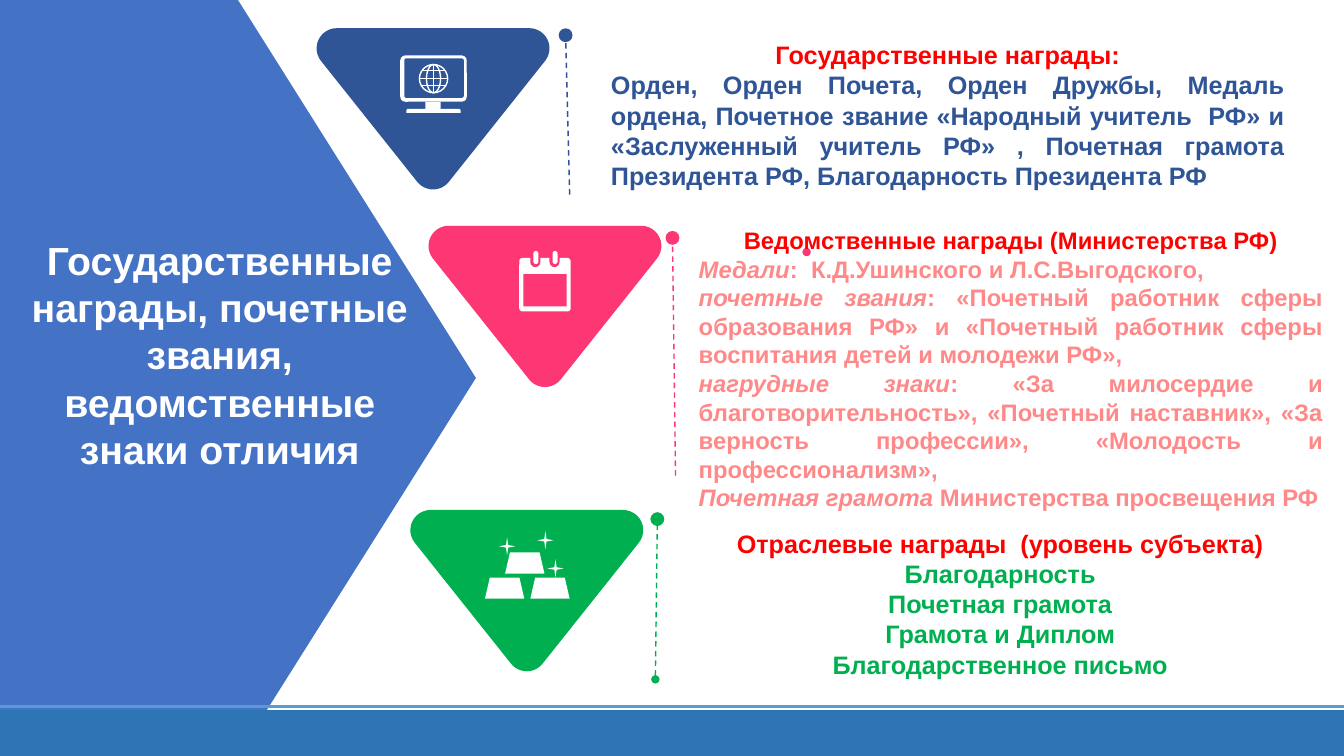
from math import cos, radians, sin

from lxml import etree
from pptx import Presentation
from pptx.dml.color import RGBColor
from pptx.enum.dml import MSO_LINE
from pptx.enum.shapes import MSO_CONNECTOR, MSO_SHAPE
from pptx.enum.text import MSO_ANCHOR, PP_ALIGN
from pptx.oxml.ns import qn
from pptx.util import Inches, Pt

COLORS = {
    "arrow": "4472C4", "white": "FFFFFF", "red": "FF0000",
    "navy": "2F5597", "pink": "FC3774", "salmon": "FF8989",
    "green": "00B050", "band": "2E75B6", "band_edge": "5B9BD5",
}


def add_shape(shapes, kind, box, fill=None, line=None, adjustment=None):
    """Add a preset shape; box is left, top, width, height in inches."""
    shape = shapes.add_shape(kind, *map(Inches, box))
    shape.shadow.inherit = False
    if fill:
        shape.fill.solid()
        shape.fill.fore_color.rgb = RGBColor.from_string(COLORS[fill])
    else:
        shape.fill.background()
    if line:
        shape.line.color.rgb = RGBColor.from_string(COLORS[line])
        shape.line.width = Pt(1)
    else:
        shape.line.fill.background()
    if adjustment is not None:
        shape.adjustments[0] = adjustment
    return shape


def add_line(shapes, start, end, color, width=1, dots=None):
    """Add a line; dots maps headEnd or tailEnd to a dot size and makes it dashed."""
    line = shapes.add_connector(MSO_CONNECTOR.STRAIGHT, *map(Inches, start + end))
    line.line.color.rgb = RGBColor.from_string(COLORS[color])
    line.line.width = Pt(width)
    properties = line._element.spPr
    if dots:
        line.line.dash_style = MSO_LINE.DASH
        for line_end, size in dots.items():
            etree.SubElement(properties.find(qn("a:ln")), qn(f"a:{line_end}"),
                             type="oval", w=size, len=size)
    etree.SubElement(properties, qn("a:effectLst"))


presentation = Presentation()
presentation.slide_width = Inches(13.33)
presentation.slide_height = Inches(7.5)
slide = presentation.slides.add_slide(presentation.slide_layouts[6])

add_shape(slide.shapes, MSO_SHAPE.PENTAGON, (0, 0, 4.72, 7.5), "arrow")

# Rounded triangle: corner centres with the start and end angle of each arc
CORNER_RADIUS = 0.2
CORNERS = [(2.11, 0.2, -90, 39), (1.155, 1.4, 39, 141), (0.2, 0.2, 141, 270)]
ARC_STEPS = 12
triangle = [
    (x + CORNER_RADIUS * cos(radians(first + (last - first) * step / ARC_STEPS)),
     y + CORNER_RADIUS * sin(radians(first + (last - first) * step / ARC_STEPS)))
    for x, y, first, last in CORNERS
    for step in range(ARC_STEPS + 1)
]
badges = []
for left, top, color in [(3.14, 0.28, "navy"), (4.25, 2.24, "pink"), (4.07, 5.06, "green")]:
    badge = slide.shapes.add_group_shape().shapes
    points = [(Inches(left + x), Inches(top + y)) for x, y in triangle]
    builder = badge.build_freeform(*points[0])
    builder.add_line_segments(points[1:])
    shape = builder.convert_to_shape()
    shape.shadow.inherit = False
    shape.fill.solid()
    shape.fill.fore_color.rgb = RGBColor.from_string(COLORS[color])
    shape.line.fill.background()
    badges.append(badge)
computer, calendar, bars = badges

# Computer with a globe
add_shape(computer, MSO_SHAPE.ROUNDED_RECTANGLE, (3.97, 0.55, 0.66, 0.46), "white", adjustment=0.11)
add_shape(computer, MSO_SHAPE.ROUNDED_RECTANGLE, (4.01, 0.58, 0.59, 0.39), "navy", adjustment=0.05)
add_shape(computer, MSO_SHAPE.RECTANGLE, (4.22, 1.01, 0.15, 0.08), "white")
add_shape(computer, MSO_SHAPE.ROUND_2_SAME_RECTANGLE, (4.03, 1.08, 0.54, 0.04), "white", adjustment=0.5)
for width in (0.28, 0.14):
    add_shape(computer, MSO_SHAPE.OVAL, (4.3 - width / 2, 0.64, width, 0.28), line="white")
add_line(computer, (4.3, 0.64), (4.3, 0.92), "white")
for y, half_width in [(0.7, 0.11), (0.78, 0.14), (0.85, 0.11)]:
    add_line(computer, (4.3 - half_width, y), (4.3 + half_width, y), "white")

# Calendar
add_shape(calendar, MSO_SHAPE.ROUNDED_RECTANGLE, (5.15, 2.56, 0.51, 0.53), "white", adjustment=0.06)
add_shape(calendar, MSO_SHAPE.RECTANGLE, (5.19, 2.72, 0.43, 0.32), "pink")
for x in (5.31, 5.5):
    add_shape(calendar, MSO_SHAPE.ROUNDED_RECTANGLE, (x - 0.05, 2.5, 0.1, 0.15), "pink", adjustment=0.5)
    add_shape(calendar, MSO_SHAPE.ROUNDED_RECTANGLE, (x - 0.02, 2.49, 0.05, 0.13), "white", adjustment=0.5)

# Shining bars
for left, top in [(4.81, 5.73), (5.26, 5.73), (5.01, 5.48)]:
    add_shape(bars, MSO_SHAPE.TRAPEZOID, (left, top, 0.39, 0.21), "white", adjustment=0.23)
for x, y in [(5.03, 5.42), (5.41, 5.36), (5.51, 5.64)]:
    add_shape(bars, MSO_SHAPE.STAR_4_POINT, (x - 0.08, y - 0.09, 0.16, 0.18), "white", adjustment=0.1)

for start, end, color, dots in [
    ((6.7, 4.72), (6.67, 2.36), "pink", {"tailEnd": "lg"}),
    ((6.5, 6.74), (6.52, 5.15), "green", {"headEnd": "med", "tailEnd": "lg"}),
    ((5.65, 1.93), (5.61, 0.35), "navy", {"tailEnd": "lg"}),
    ((8, 2.5), (8.01, 2.5), "pink", {"headEnd": "med"}),
]:
    add_line(slide.shapes, start, end, color, dots=dots)

footer = slide.shapes.add_group_shape().shapes
add_line(footer, (0, 7.01), (13.33, 7.01), "band_edge", 2.25)
add_shape(footer, MSO_SHAPE.RECTANGLE, (0, 7.05, 13.33, 0.45), "band", "band")

# Each text: box, inset, size, paragraphs of alignment, colour and (text, italic) runs
CENTER, JUSTIFY = PP_ALIGN.CENTER, PP_ALIGN.JUSTIFY
TEXTS = {
    "title": ((0, 2.75, 4.36, 1.53), None, 28, [
        (CENTER, "white", [("Государственные награды, почетные звания, ведомственные знаки отличия", False)]),
    ]),
    "state": ((6.06, 0.39, 6.68, 1.51), 0, 18, [
        (CENTER, "red", [("Государственные награды:", False)]),
        (JUSTIFY, "navy", [("Орден, Орден Почета, Орден Дружбы, Медаль ордена, Почетное звание «Народный учитель  РФ» и "
                            "«Заслуженный учитель РФ» , Почетная грамота Президента РФ, Благодарность Президента РФ", False)]),
    ]),
    "ministry": ((6.93, 2.24, 6.19, 2.86), 0, 17, [
        (CENTER, "red", [("Ведомственные награды (Министерства РФ)", False)]),
        (JUSTIFY, "salmon", [("Медали", True), (":  К.Д.Ушинского и Л.С.Выгодского, ", False)]),
        (JUSTIFY, "salmon", [("почетные звания", True),
                             (": «Почетный работник сферы образования РФ» и «Почетный работник сферы "
                              "воспитания детей и молодежи РФ», ", False)]),
        (JUSTIFY, "salmon", [("нагрудные знаки", True),
                             (": «За милосердие и благотворительность», «Почетный наставник», "
                              "«За верность профессии», «Молодость и профессионализм»,", False)]),
        (JUSTIFY, "salmon", [("Почетная грамота ", True), ("Министерства просвещения РФ", False)]),
    ]),
    "regional": ((6.72, 5.28, 6.4, 1.52), None, 18, [
        (CENTER, "red", [("Отраслевые награды  (уровень субъекта)", False)]),
        *[(CENTER, "green", [(award, False)]) for award in
          ("Благодарность", "Почетная грамота", "Грамота и Диплом", "Благодарственное письмо")],
    ]),
}
for name, (box, inset, size, paragraphs) in TEXTS.items():
    frame = slide.shapes.add_textbox(*map(Inches, box)).text_frame
    frame.word_wrap = True
    if name == "title":
        frame.vertical_anchor = MSO_ANCHOR.MIDDLE
    if inset is not None:
        frame.margin_left = frame.margin_right = Inches(inset)
        frame.margin_top = frame.margin_bottom = Inches(inset)
    for index, (alignment, color, runs) in enumerate(paragraphs):
        paragraph = frame.add_paragraph() if index else frame.paragraphs[0]
        paragraph.alignment = alignment
        paragraph.font.name = "Arial"
        paragraph.font.size = Pt(size)
        paragraph.font.bold = True
        paragraph.font.color.rgb = RGBColor.from_string(COLORS[color])
        for text, italic in runs:
            run = paragraph.add_run()
            run.text = text
            if italic:
                run.font.italic = True
        if name == "regional" and index == 0:
            paragraph.line_spacing = Pt(15)

presentation.save("out.pptx")
